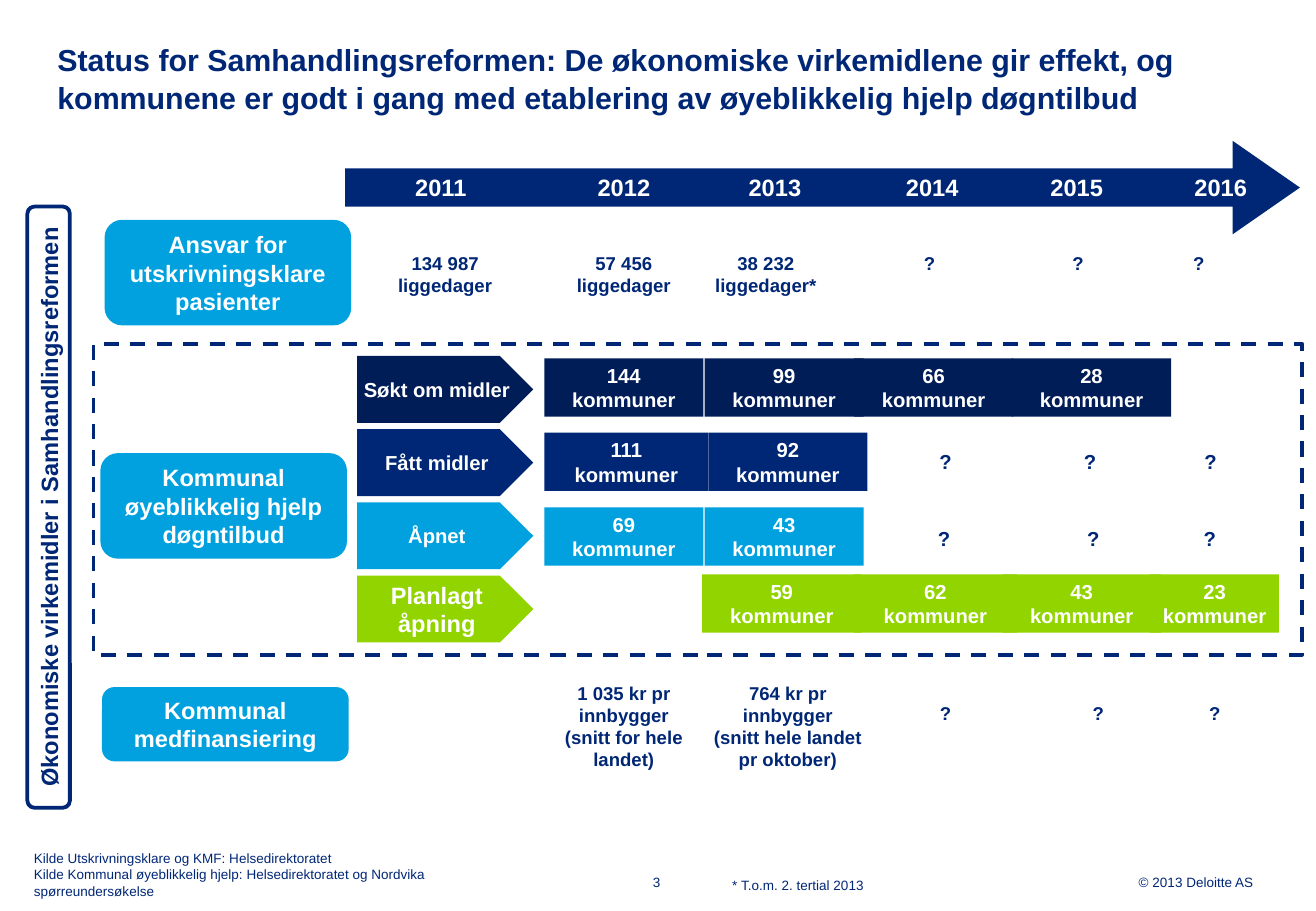
from lxml import etree
from pptx import Presentation
from pptx.dml.color import RGBColor
from pptx.enum.dml import MSO_LINE
from pptx.enum.shapes import MSO_SHAPE
from pptx.enum.text import MSO_ANCHOR, PP_ALIGN
from pptx.oxml.ns import qn
from pptx.util import Pt

LEFT, MID, RIGHT = PP_ALIGN.LEFT, PP_ALIGN.CENTER, PP_ALIGN.RIGHT
TOP, HALF = MSO_ANCHOR.TOP, MSO_ANCHOR.MIDDLE
ROUND, RECT = MSO_SHAPE.ROUNDED_RECTANGLE, MSO_SHAPE.RECTANGLE
PLATE, ARROW = MSO_SHAPE.PENTAGON, MSO_SHAPE.RIGHT_ARROW
DASH = MSO_LINE.DASH
NAVY, DARK, BLUE, GREEN, WHITE = "002776", "001D58", "00A1DE", "92D400", "FFFFFF"
FONT = "Arial"

TITLE = ("Status for Samhandlingsreformen: De økonomiske virkemidlene gir effekt, og "
         "kommunene er godt i gang med etablering av øyeblikkelig hjelp døgntilbud")
SIDE = "Økonomiske virkemidler i Samhandlingsreformen"
YEARS = [("2011", 261.3), ("2012", 369.8), ("2013", 459.3),
         ("2014", 552.6), ("2015", 638.2), ("2016", 723.6)]
THEMES = [
    ("Ansvar for utskrivningsklare pasienter", 62, 130.3, 62.6),
    ("Kommunal øyeblikkelig hjelp døgntilbud", 59.5, 268.6, 62.6),
    ("Kommunal medfinansiering", 60.5, 407.3, 44),
]
ROWS = [
    ("Søkt om midler", 12, DARK, 212.4,
     [("144", 322.6, 94.3), ("99", 417.6, 94.3), ("66", 506.2, 94.3), ("28", 599.8, 94.3)]),
    ("Fått midler", 12, NAVY, 256.4, [("111", 322.6, 97.2), ("92", 419.8, 94.3)]),
    ("Åpnet", 12, BLUE, 300.7, [("69", 322.6, 94.3), ("43", 417.6, 94.3)]),
    ("Planlagt åpning", 14, GREEN, 340.4,
     [("62", 506.2, 96.5), ("59", 416.2, 94.3), ("43", 594, 94.3), ("23", 681.8, 76.3)]),
]
FACTS = [
    (["134 987 liggedager"], 216.7, 146.2, 32.4),
    (["57 456", "liggedager"], 322.6, 146.2, 32.4),
    (["38 232", "liggedager*"], 406.8, 146.2, 32.4),
    (["1 035 kr pr innbygger", "(snitt for hele landet)"], 322.6, 401, 59),
    (["764 kr pr innbygger", "(snitt hele landet pr oktober)"], 419.8, 401, 72.7),
]
OPEN = [
    (11, 146.2, [551, 639, 710.5]),
    (12, 263.5, [560.5, 646, 717.5]),
    (12, 308.9, [559.5, 648, 717]),
    (11, 413.3, [560.5, 651, 720]),
]
NOTES = [
    (["Kilde Utskrivningsklare og KMF: Helsedirektoratet",
      "Kilde Kommunal øyeblikkelig hjelp: Helsedirektoratet og Nordvika spørreundersøkelse"],
     17, 501, 270, 34.6, LEFT),
    (["* T.o.m. 2. tertial 2013"], 431, 517, 270, 15, LEFT),
    (["3"], 374.4, 515, 29.5, 17, MID),
    (["© 2013 Deloitte AS"], 663, 515, 83, 17, RIGHT),
]


def rgb(code):
    return RGBColor.from_string(code)


def write(item, lines, size, color, align=MID, anchor=HALF, bold=True, pad=3, tabs=()):
    frame = item.text_frame
    frame.word_wrap = True
    frame.vertical_anchor = anchor
    frame.margin_left = frame.margin_right = Pt(pad)
    frame.margin_top = frame.margin_bottom = Pt(pad)
    for i, line in enumerate(lines):
        para = frame.add_paragraph() if i else frame.paragraphs[0]
        para.alignment = align
        if tabs:
            stops = etree.SubElement(para._p.get_or_add_pPr(), qn("a:tabLst"))
            for x in tabs:
                stop = etree.SubElement(stops, qn("a:tab"))
                stop.set("pos", str(Pt(x)))
                stop.set("algn", "ctr")
        run = para.add_run()
        run.text = line
        font = run.font
        font.name, font.size, font.bold = FONT, Pt(size), bold
        font.color.rgb = rgb(color)


def shape(kind, x, y, w, h, fill=None, line=None):
    item = slide.shapes.add_shape(kind, Pt(x), Pt(y), Pt(w), Pt(h))
    item.shadow.inherit = False
    if fill:
        item.fill.solid()
        item.fill.fore_color.rgb = rgb(fill)
    else:
        item.fill.background()
    if line:
        item.line.color.rgb = rgb(line)
        item.line.width = Pt(2.25)
    else:
        item.line.fill.background()
    return item


def box(x, y, w, h):
    return slide.shapes.add_textbox(Pt(x), Pt(y), Pt(w), Pt(h))


def spread(item, words, spots, size, color, anchor):
    start = item.left.pt + 3
    write(item, ["".join("\t" + word for word in words)], size, color,
          LEFT, anchor, tabs=[x - start for x in spots])


deck = Presentation()
deck.slide_width, deck.slide_height = Pt(780), Pt(540)
slide = deck.slides.add_slide(deck.slide_layouts[5])

title = slide.shapes.title
title.left, title.top, title.width, title.height = Pt(34), Pt(23), Pt(712), Pt(47)
write(title, [TITLE], 18, NAVY, LEFT, TOP, pad=0)
title.text_frame.paragraphs[0].line_spacing = 1.06

for text, x, y, h in THEMES:
    write(shape(ROUND, x, y, 146.2, h, BLUE), [text], 14, WHITE)

side = shape(ROUND, -149.4, 288, 356.4, 25.2, line=NAVY)
side.rotation = 270
write(side, [SIDE], 14, NAVY)

arrow = shape(ARROW, 204.5, 83.5, 566, 55.4, NAVY)
arrow.adjustments[0], arrow.adjustments[1] = 0.41, 0.72
words, spots = zip(*YEARS)
spread(arrow, words, spots, 14, WHITE, HALF)

for lines, x, y, h in FACTS:
    write(box(x, y, 94.3, h), lines, 11, NAVY, anchor=TOP)

for size, y, spots in OPEN:
    spread(box(500, y, 253, 19), "?" * len(spots), spots, size, NAVY, TOP)

for i, (name, size, color, y, bars) in enumerate(ROWS):
    write(shape(PLATE, 211.7, 211 + 43.4 * i, 104.4, 39.6, color), [name], size, WHITE)
    for count, x, w in bars:
        write(shape(RECT, x, y, w, 34.6, color), [count, "kommuner"], 12, WHITE, anchor=TOP)

for lines, x, y, w, h, align in NOTES:
    write(box(x, y, w, h), lines, 8, NAVY, align, TOP, False)

frame = shape(RECT, 55.4, 203.8, 716.4, 184.3, line=NAVY)
frame.line.dash_style = DASH

deck.save("out.pptx")
